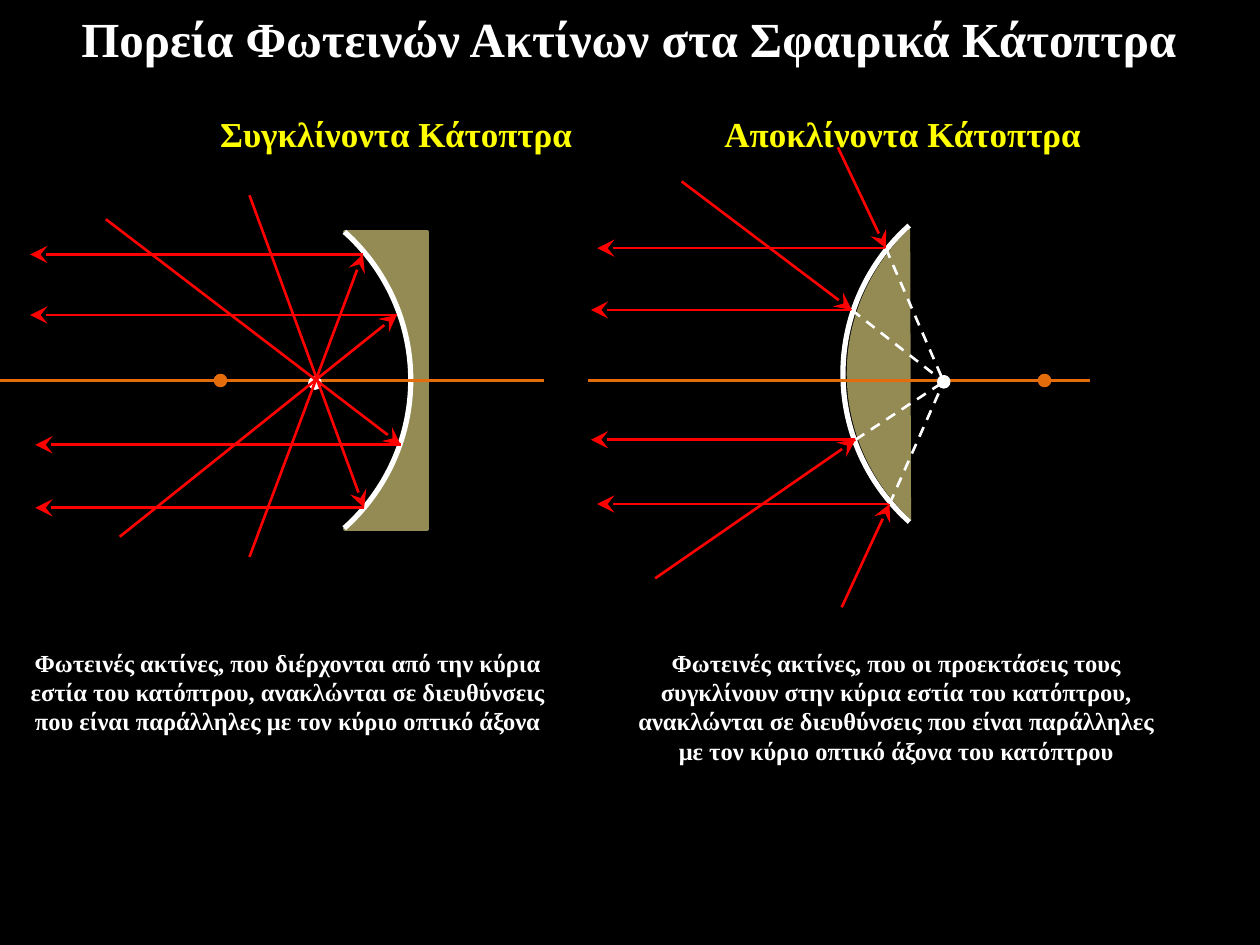
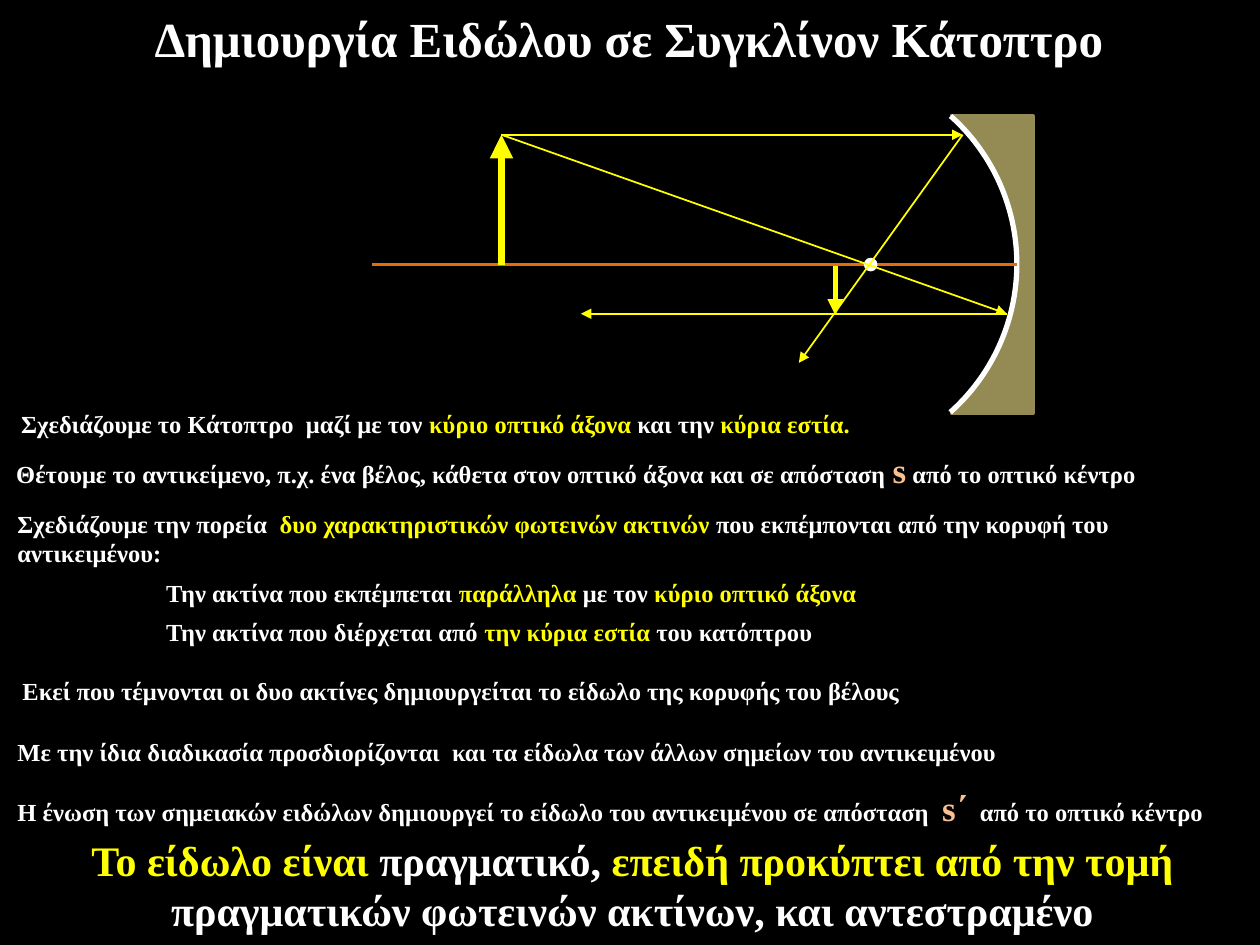
from lxml import etree
from pptx import Presentation, util as u
from pptx.dml.color import RGBColor
from pptx.enum import dml, shapes, text
from pptx.oxml.ns import qn

INK = {"back": "000000", "white": "FFFFFF", "gold": "FFFF00", "ray": "FF0000",
       "axis": "E46C0A", "glass": "948A54", "peach": "FAC090"}
FACE = "Times New Roman"
WIDE, HIGH = u.Inches(10), u.Inches(7.5)
COL, ROW = WIDE / 100, HIGH / 75   # square grid cells
SIDE = 31.5                        # side of a mirror's full circle
BEND = (187.059, 29.015)           # start and end angle of the hollow arc
BULGE = (78.985, 136.941)          # the same arc seen from the other side
LEFT, MID = text.PP_ALIGN.LEFT, text.PP_ALIGN.CENTER
FORM = shapes.MSO_SHAPE


def ink(name):
    return RGBColor.from_string(INK[name])


def write(frame, words, size, align=LEFT, tone="white", accent=("gold", None)):
    """Write words; the parts between bars take the accent colour and size."""
    frame.word_wrap = True
    frame.auto_size = text.MSO_AUTO_SIZE.NONE
    frame.vertical_anchor = text.MSO_ANCHOR.TOP
    para = frame.paragraphs[0]
    para.alignment = align
    font = para.font
    font.name, font.size, font.bold = FACE, u.Pt(size), True
    font.color.rgb = ink(tone)
    for i, part in enumerate(words.split("|")):
        if part:
            run = para.add_run()
            run.text = part
            if i % 2:
                run.font.color.rgb = ink(accent[0])
                if accent[1]:
                    run.font.size = u.Pt(accent[1])


class Pane:
    """A region whose parts are placed in grid cells from its own corner."""

    def __init__(self, slide, x=0, y=0):
        self.slide, self.x, self.y = slide, x, y

    def spot(self, x, y):
        return round((self.x + x) * COL), round((self.y + y) * ROW)

    def box(self, x, y, w, h):
        return *self.spot(x, y), round(w * COL), round(h * ROW)

    def shape(self, form, box, fill, line=None, width=2, turn=()):
        item = self.slide.shapes.add_shape(form, *self.box(*box))
        item.shadow.inherit = False
        item.fill.solid()
        item.fill.fore_color.rgb = ink(fill)
        if line:
            item.line.color.rgb = ink(line)
            item.line.width = u.Pt(width)
        else:
            item.line.fill.background()
        for i, angle in enumerate(turn):
            item.adjustments[i] = angle

    def dot(self, x, y, tone):
        self.shape(FORM.OVAL, (x - .4, y - .4, .8, .8), tone, tone)

    def line(self, start, end, tone, width=1.5, tip=None, size="med", dash=False):
        item = self.slide.shapes.add_connector(
            shapes.MSO_CONNECTOR.STRAIGHT, *self.spot(*start), *self.spot(*end))
        item.line.color.rgb = ink(tone)
        item.line.width = u.Pt(width)
        if dash:
            item.line.dash_style = dml.MSO_LINE.DASH
        props = item._element.spPr
        if tip:
            etree.SubElement(props.find(qn("a:ln")), qn("a:tailEnd"),
                             type=tip, w=size, len=size)
        etree.SubElement(props, qn("a:effectLst"))

    def ray(self, start, end):
        self.line(start, end, "ray", tip="stealth", size="lg")

    def text(self, box, *args, **style):
        area = self.slide.shapes.add_textbox(*self.box(*box))
        write(area.text_frame, *args, **style)

    def hollow(self):
        """Converging mirror: a block with a round bite."""
        self.shape(FORM.RECTANGLE, (26.3, 4, 6.5, 23.6), "glass", "glass")
        self.shape(FORM.ARC, (0, 0, SIDE, SIDE), "back", "white", 3, BEND)

    def dome(self):
        """Diverging mirror: an arc with a filled chord behind it."""
        self.shape(FORM.ARC, (0, 0, SIDE, SIDE), "back", "white", 3, BULGE)
        self.shape(FORM.CHORD, (.3, 0, SIDE, SIDE), "glass", turn=(79.506, 136.281))

    def label(self, head, note):
        """Heading and caption, each given as x, y, height and words."""
        for (x, y, h, words), w, size, tone in (
                (head, 30.7, 20, "gold"), (note, 43.3, 14, "white")):
            self.text((x, y, w, h), words, size, MID, tone)


def begin(deck, title, high):
    slide = deck.slides.add_slide(deck.slide_layouts[5])
    head = slide.shapes.title
    head.left, head.top, head.width, head.height = Pane(slide).box(-.1, .2, 100, high)
    write(head.text_frame, title, 28, MID)
    return slide


def converge(slide, x, y):
    pane = Pane(slide, x, y)
    pane.hollow()
    pane.dot(16.4, 15.8, "axis")
    pane.line((-1.2, 15.8), (42.1, 15.8), "axis")
    pane.dot(23.9, 16, "white")
    # Source of each ray, its point on the mirror, and where it leaves
    for start, hit, out in (((18.7, 29.8), (27.7, 5.8), 1.3),
                            ((8.4, 28.2), (30.4, 10.6), 1.3),
                            ((7.3, 3), (30.7, 20.9), 1.7),
                            ((18.7, 1.1), (27.8, 25.9), 1.7)):
        pane.ray(hit, (out, hit[1]))
        pane.ray(start, hit)
    pane.label((15, -6, 4.4, "Συγκλίνοντα Κάτοπτρα"),
               (.1, 36.5, 8.1, "Φωτεινές ακτίνες, που διέρχονται από την κύρια "
                "εστία του κατόπτρου, ανακλώνται σε διευθύνσεις που είναι "
                "παράλληλες με τον κύριο οπτικό άξονα"))


def diverge(slide, x, y):
    pane = Pane(slide, x, y)
    focus = (8, 16.4)
    pane.dome()
    pane.dot(16, 16.3, "axis")
    pane.line((-20.2, 16.3), (19.6, 16.3), "axis")
    pane.dot(*focus, "white")
    for start, hit, out in (((-.4, -2.2), (3.4, 5.8), -19.5),
                            ((-12.8, .5), (.7, 10.7), -20),
                            ((-14.9, 32), (1, 21), -20),
                            ((-.1, 34.3), (3.7, 26.1), -19.5)):
        pane.ray(hit, (out, hit[1]))
        pane.line(hit, focus, "white", dash=True)
        pane.ray(start, hit)
    pane.label((-10.6, -5.5, 4.4, "Αποκλίνοντα Κάτοπτρα"),
               (-17.4, 37, 10.4, "Φωτεινές ακτίνες, που οι προεκτάσεις τους "
                "συγκλίνουν στην κύρια εστία του κατόπτρου, ανακλώνται σε "
                "διευθύνσεις που είναι παράλληλες με τον κύριο οπτικό άξονα "
                "του κατόπτρου"))


def image(slide, x, y):
    """Object, its two rays and the image they form."""
    pane = Pane(slide, x, y)
    axis = 15.8
    top, foot = (-9.4, 5.5), (-9.4, axis)
    upper, lower = (27.2, 5.5), (30.7, 19.7)
    pane.hollow()
    pane.line((-19.7, axis), (SIDE, axis), "axis")
    pane.dot(19.9, axis, "white")
    for start, end, width in ((foot, top, 4.5),
                              (top, upper, 1), (upper, (14.2, 23.6), 1),
                              (top, lower, 1), (lower, (-3.1, 19.7), 1),
                              ((17.1, 15.9), (17.1, 19.8), 3)):
        pane.line(start, end, "gold", width, "triangle")


def steps(slide, x, y):
    pane = Pane(slide, x, y)
    mark, sign = ("gold", None), ("peach", 20)
    for box, words, accent in (
            ((.4, 0, 95.7, 3.9), "Σχεδιάζουμε το Κάτοπτρο  μαζί με τον "
             "|κύριο οπτικό άξονα |και την |κύρια εστία.", mark),
            ((0, 3.1, 92.2, 4.8), "Θέτουμε το αντικείμενο, π.χ. ένα βέλος, κάθετα "
             "στον οπτικό άξονα και σε απόσταση |s| από το οπτικό κέντρο", sign),
            ((.1, 7.9, 97.3, 6.3), "Σχεδιάζουμε την πορεία  |δυο χαρακτηριστικών "
             "φωτεινών ακτινών |που εκπέμπονται από την κορυφή του "
             "αντικειμένου:", mark),
            ((11.9, 13.4, 59.8, 3.8), "Την ακτίνα που εκπέμπεται |παράλληλα| με τον "
             "|κύριο οπτικό άξονα", mark),
            ((11.9, 16.5, 56.5, 4.3), "Την ακτίνα που διέρχεται από |την κύρια "
             "εστία |του κατόπτρου", mark),
            ((.5, 21.2, 72, 4.7), "Εκεί που τέμνονται οι δυο ακτίνες δημιουργείται "
             "το είδωλο της κορυφής του βέλους", mark),
            ((.1, 26, 83.5, 4.7), "Με την ίδια διαδικασία προσδιορίζονται  και τα "
             "είδωλα των άλλων σημείων του αντικειμένου", mark),
            ((.1, 29.9, 97.3, 4.7), "Η ένωση των σημειακών ειδώλων δημιουργεί το "
             "είδωλο του αντικειμένου σε απόσταση  |s΄|  από το οπτικό κέντρο",
             sign)):
        pane.text(box, words, 14, accent=accent)
    # Conclusion
    pane.text((.1, 33.7, 99.6, 8.8), "|Το είδωλο είναι |πραγματικό,| επειδή "
              "προκύπτει από την τομή |πραγματικών φωτεινών ακτίνων, και "
              "αντεστραμένο", 24, MID)


def main():
    deck = Presentation()
    deck.slide_width, deck.slide_height = WIDE, HIGH
    back = deck.slide_master.background.fill
    back.solid()
    back.fore_color.rgb = ink("back")

    slide = begin(deck, "Πορεία Φωτεινών Ακτίνων στα Σφαιρικά Κάτοπτρα", 6.6)
    converge(slide, 1.1, 14.4)
    diverge(slide, 66.9, 13.9)

    slide = begin(deck, "Δημιουργία Ειδώλου σε Συγκλίνον Κάτοπτρο", 4.7)
    image(slide, 49.2, 5.2)
    steps(slide, .3, 32)
    deck.save("out.pptx")


if __name__ == "__main__":
    main()
